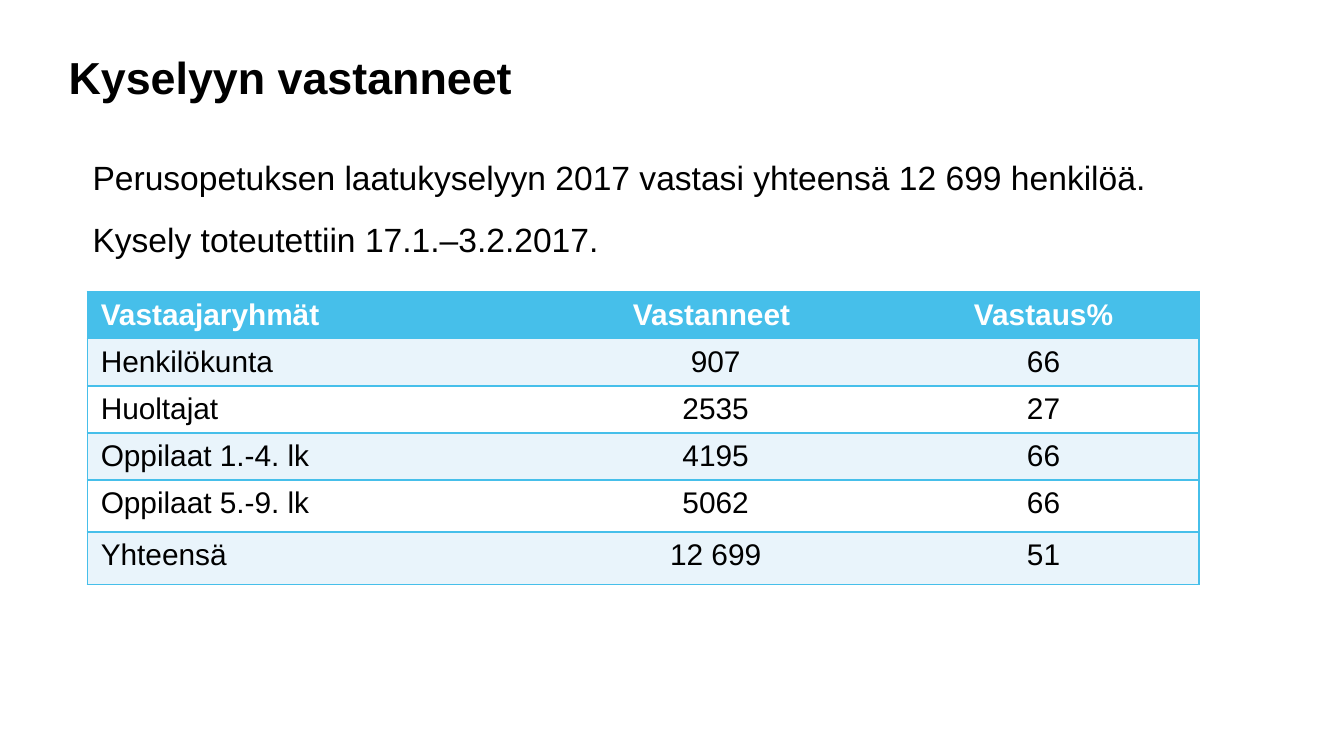
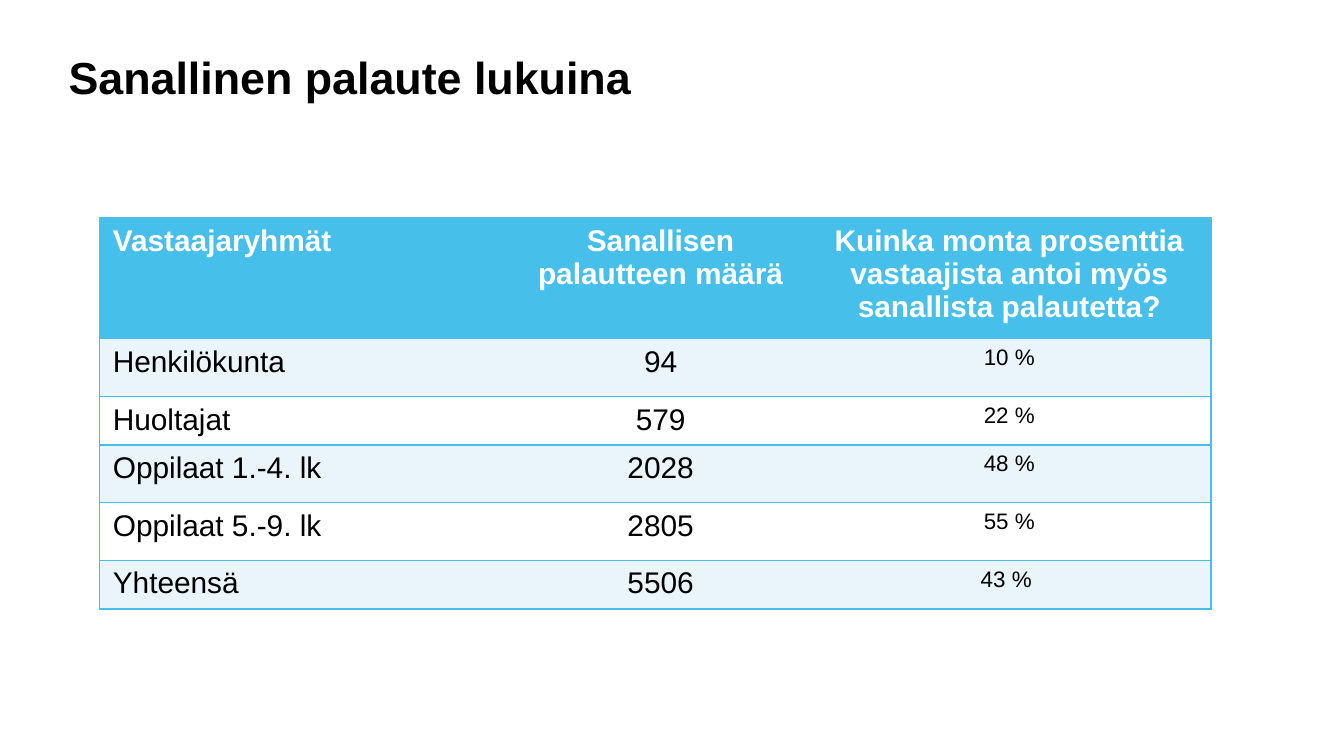
import pptx
import pptx.util
import pptx.dml.color
import pptx.enum.text
import pptx.oxml
import pptx.oxml.ns

Inches = pptx.util.Inches
Pt = pptx.util.Pt
RGBColor = pptx.dml.color.RGBColor
ALIGN = pptx.enum.text.PP_ALIGN
ANCHOR = pptx.enum.text.MSO_ANCHOR

BLACK = RGBColor(0x00, 0x00, 0x00)
WHITE = RGBColor(0xFF, 0xFF, 0xFF)
BLUE = RGBColor(0x46, 0xBF, 0xEA)
PALE_BLUE = RGBColor(0xE9, 0xF4, 0xFB)

TITLE_FRAME = {"margin_left": 0, "margin_top": 0, "margin_bottom": 0, "vertical_anchor": ANCHOR.MIDDLE}
TITLE_PARAGRAPH = {"line_spacing": Pt(33)}
BODY_PARAGRAPH = {"line_spacing": Pt(21), "space_after": Pt(12)}

SLIDES = [
    {
        "title": "Kyselyyn vastanneet",
        "body": [
            "Perusopetuksen laatukyselyyn 2017 vastasi yhteensä 12 699 henkilöä.",
            "Kysely toteutettiin 17.1.–3.2.2017.",
        ],
        "position": (0.65, 2.17),
        "columns": [3.39, 2.57, 2.31],
        "rows": [0.35, 0.35, 0.35, 0.35, 0.39, 0.39],
        "last_column_size": 16,
        "cells": [
            ["Vastaajaryhmät", "Vastanneet ", "Vastaus%"],
            ["Henkilökunta", "907", "66"],
            ["Huoltajat", "2535", "27"],
            ["Oppilaat 1.-4. lk", "4195", "66"],
            ["Oppilaat 5.-9. lk", "5062", "66"],
            ["Yhteensä", "12 699", "51"],
        ],
    },
    {
        "title": "Sanallinen palaute lukuina",
        "body": [],
        "position": (0.74, 1.62),
        "columns": [3.08, 2.19, 3],
        "rows": [0.9, 0.43, 0.36, 0.43, 0.43, 0.36],
        "last_column_size": 12,
        "cells": [
            ["Vastaajaryhmät", "Sanallisen palautteen määrä",
             "Kuinka monta prosenttia vastaajista antoi myös sanallista palautetta?"],
            ["Henkilökunta", "94", "10 %"],
            ["Huoltajat", "579", "22 %"],
            ["Oppilaat 1.-4. lk", "2028", "48 %"],
            ["Oppilaat 5.-9. lk", "2805", "55 %"],
            ["Yhteensä", "5506", "43 % "],
        ],
    },
]


def write_paragraph(paragraph, text, size, color, bold, paragraph_format):
    for name, value in paragraph_format.items():
        setattr(paragraph, name, value)
    run = paragraph.add_run()
    run.text = text
    for name, value in {"name": "Arial", "size": Pt(size), "bold": bold}.items():
        setattr(run.font, name, value)
    run.font.color.rgb = color


def set_borders(cell, visible_sides):
    properties = cell._tc.get_or_add_tcPr()
    for index, side in enumerate("LRTB"):
        fill = f'<a:solidFill><a:srgbClr val="{BLUE}"/></a:solidFill>' if side in visible_sides else "<a:noFill/>"
        border = pptx.oxml.parse_xml(
            f'<a:ln{side} {pptx.oxml.ns.nsdecls("a")} w="{Pt(1)}">{fill}</a:ln{side}>')
        properties.insert(index, border)


presentation = pptx.Presentation()
presentation.slide_width = Inches(10)
presentation.slide_height = Inches(10 * 9 / 16)

for content in SLIDES:
    slide = presentation.slides.add_slide(presentation.slide_layouts[6])

    if content["body"]:
        body_frame = slide.shapes.add_textbox(Inches(0.59), Inches(1.13), Inches(8.49), Inches(0.85)).text_frame
        body_frame.word_wrap = True
        for index, text in enumerate(content["body"]):
            paragraph = body_frame.add_paragraph() if index else body_frame.paragraphs[0]
            write_paragraph(paragraph, text, 18, BLACK, False, BODY_PARAGRAPH)

    left, top = content["position"]
    columns, rows = content["columns"], content["rows"]
    table = slide.shapes.add_table(len(rows), len(columns), Inches(left), Inches(top),
                                   Inches(sum(columns)), Inches(sum(rows))).table
    for column, width in zip(table.columns, columns):
        column.width = Inches(width)
    for row, height in zip(table.rows, rows):
        row.height = Inches(height)

    last = len(columns) - 1
    for row_index, values in enumerate(content["cells"]):
        header = row_index == 0
        row_fill = BLUE if header else PALE_BLUE if row_index % 2 else WHITE
        for column_index, value in enumerate(values):
            cell = table.cell(row_index, column_index)
            cell.margin_bottom = Inches(0.03)
            cell.fill.solid()
            cell.fill.fore_color.rgb = row_fill
            set_borders(cell, {0: "LTB", last: "RTB"}.get(column_index, "TB"))
            size = content["last_column_size"] if column_index == last and not header else 16
            write_paragraph(cell.text_frame.paragraphs[0], value, size, WHITE if header else BLACK, header,
                            {"alignment": ALIGN.CENTER if column_index else ALIGN.LEFT})

    title_frame = slide.shapes.add_textbox(Inches(0.51), Inches(0.15), Inches(8.95), Inches(0.78)).text_frame
    title_frame.word_wrap = True
    for name, value in TITLE_FRAME.items():
        setattr(title_frame, name, value)
    write_paragraph(title_frame.paragraphs[0], content["title"], 24, BLACK, True, TITLE_PARAGRAPH)

presentation.save("out.pptx")
